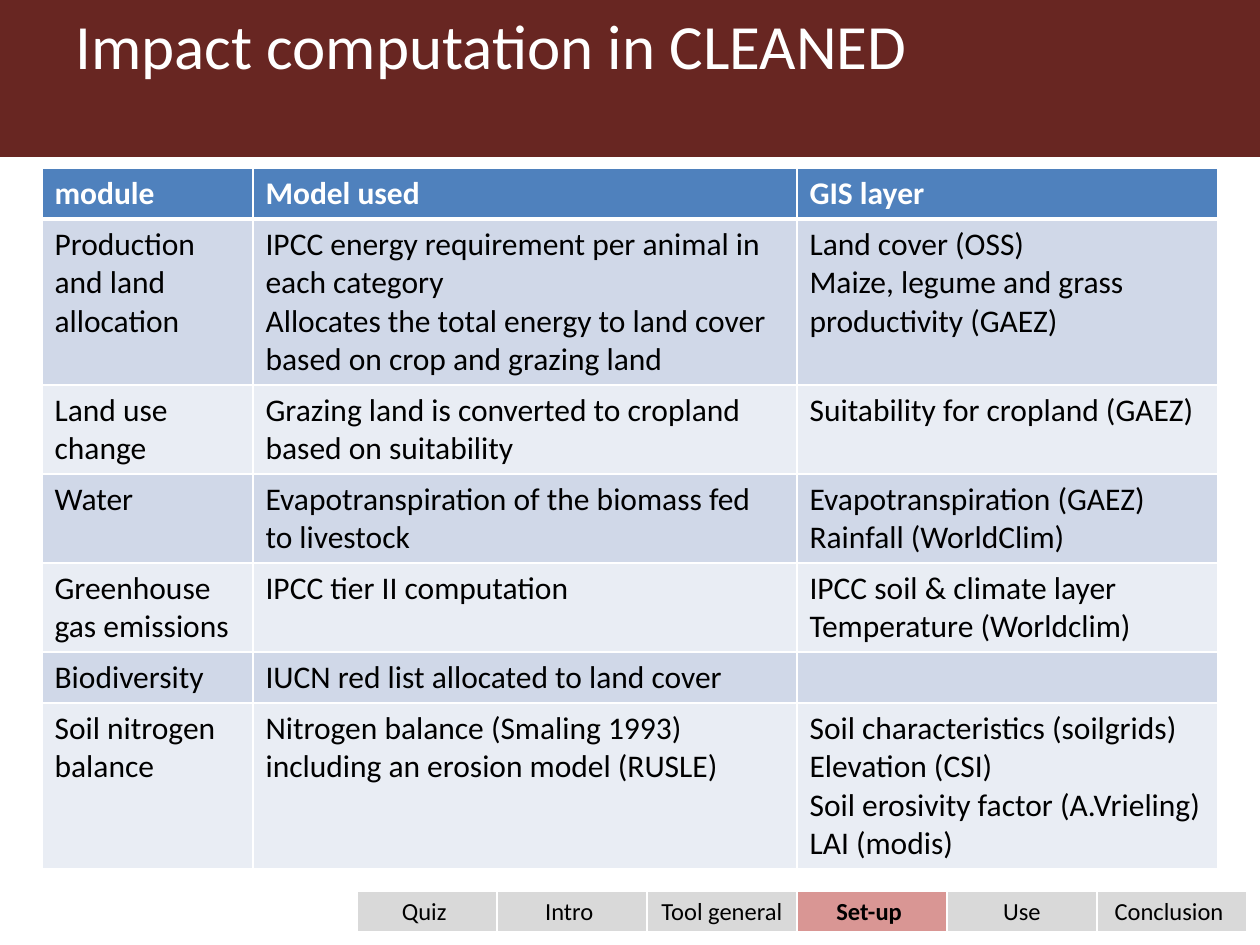
from lxml import etree
from pptx import Presentation
from pptx.dml.color import RGBColor
from pptx.enum.shapes import MSO_SHAPE
from pptx.enum.text import PP_ALIGN
from pptx.oxml.ns import qn
from pptx.util import Emu, Pt

EMU_PER_PX = 914400 / 126
COLORS = {
    "white": "FFFFFF", "black": "000000", "banner": "682622",
    "header": "4F81BD", "band_dark": "D0D8E8", "band_light": "E9EDF4",
    "tab": "D9D9D9", "active_tab": "D99694",
}

MODULE_ROWS = [
    (["module"], ["Model used"], ["GIS layer"]),
    (["Production and land allocation"],
     ["IPCC energy requirement per animal in each category",
      "Allocates the total energy to land cover based on crop and grazing land"],
     ["Land cover (OSS)", "Maize, legume and grass productivity (GAEZ)"]),
    (["Land use change"],
     ["Grazing land is converted to cropland based on suitability"],
     ["Suitability for cropland (GAEZ)"]),
    (["Water"],
     ["Evapotranspiration of the biomass fed to livestock"],
     ["Evapotranspiration (GAEZ)", "Rainfall (WorldClim)"]),
    (["Greenhouse gas emissions"],
     ["IPCC tier II computation"],
     ["IPCC soil & climate layer", "Temperature (Worldclim)"]),
    (["Biodiversity"], ["IUCN red list allocated to land cover"], []),
    (["Soil nitrogen balance"],
     ["Nitrogen balance (Smaling 1993) including an erosion model (RUSLE)"],
     ["Soil characteristics (soilgrids)", "Elevation (CSI)",
      "Soil erosivity factor (A.Vrieling)", "LAI (modis)"]),
]
TABS = ["Quiz ", "Intro ", "Tool general", "Set-up ", "Use", "Conclusion "]
ACTIVE_TAB = "Set-up "


def px(length):
    return Emu(round(length * EMU_PER_PX))


def rgb(name):
    return RGBColor.from_string(COLORS[name])


class SlideBuilder:
    font_name = "Calibri"

    def __init__(self, slide):
        self.slide = slide

    def rectangle(self, left, top, width, height, fill):
        shape = self.slide.shapes.add_shape(
            MSO_SHAPE.RECTANGLE, px(left), px(top), px(width), px(height))
        shape.shadow.inherit = False
        shape.fill.solid()
        shape.fill.fore_color.rgb = rgb(fill)
        shape.line.fill.background()

    def text(self, frame, lines, size, color, bold=False, align=PP_ALIGN.LEFT):
        for index, line in enumerate(lines):
            paragraph = frame.add_paragraph() if index else frame.paragraphs[0]
            paragraph.alignment = align
            run = paragraph.add_run()
            run.text = line
            run.font.name = self.font_name
            run.font.size = Pt(size)
            run.font.bold = bold
            run.font.color.rgb = rgb(color)

    def text_box(self, left, top, width, height, lines, size, color):
        box = self.slide.shapes.add_textbox(px(left), px(top), px(width), px(height))
        box.text_frame.word_wrap = True
        self.text(box.text_frame, lines, size, color)

    def table(self, left, top, column_widths, row_heights):
        table = self.slide.shapes.add_table(
            len(row_heights), len(column_widths), px(left), px(top),
            px(sum(column_widths)), px(sum(row_heights))).table
        table.first_row = False
        table.horz_banding = False
        for column, width in zip(table.columns, column_widths):
            column.width = px(width)
        for row, height in zip(table.rows, row_heights):
            row.height = px(height)
        return table

    def cell(self, cell, lines, fill, size, color="black", bold=False,
             align=PP_ALIGN.LEFT, top_line=1, bottom_line=1):
        self.text(cell.text_frame, lines, size, color, bold, align)
        properties = cell._tc.get_or_add_tcPr()
        borders = {"L": 1, "R": 1, "T": top_line, "B": bottom_line}
        for side, width in borders.items():
            line = etree.SubElement(properties, qn(f"a:ln{side}"), w=str(Pt(width)))
            solid = etree.SubElement(line, qn("a:solidFill"))
            etree.SubElement(solid, qn("a:srgbClr"), val=COLORS["white"])
        cell.fill.solid()
        cell.fill.fore_color.rgb = rgb(fill)


def main():
    presentation = Presentation()
    presentation.slide_width = px(1260)
    presentation.slide_height = px(945)
    slide = presentation.slides.add_slide(presentation.slide_layouts[6])
    builder = SlideBuilder(slide)

    # Title banner
    builder.rectangle(0, 0, 1260, 157, "banner")
    builder.text_box(63, 0, 1134, 157, ["Impact computation in CLEANED"], 36, "white")

    # Modules, with the models and map layers they use
    modules = builder.table(42, 168, [211, 544, 421], [51, 166, 89, 89, 89, 51, 166])
    for row, contents in enumerate(MODULE_ROWS):
        if row == 0:
            style = dict(fill="header", color="white", bold=True, bottom_line=3)
        else:
            style = dict(fill="band_dark" if row % 2 else "band_light",
                         top_line=3 if row == 1 else 1)
        for column, lines in enumerate(contents):
            builder.cell(modules.cell(row, column), lines, size=18, **style)

    # Navigation tabs
    tabs = builder.table(357, 891, [140] + [150] * 5, [40])
    for column, label in enumerate(TABS):
        active = label == ACTIVE_TAB
        builder.cell(tabs.cell(0, column), [label], "active_tab" if active else "tab",
                     14, bold=active, align=PP_ALIGN.CENTER, bottom_line=3)

    presentation.save("out.pptx")


if __name__ == "__main__":
    main()
